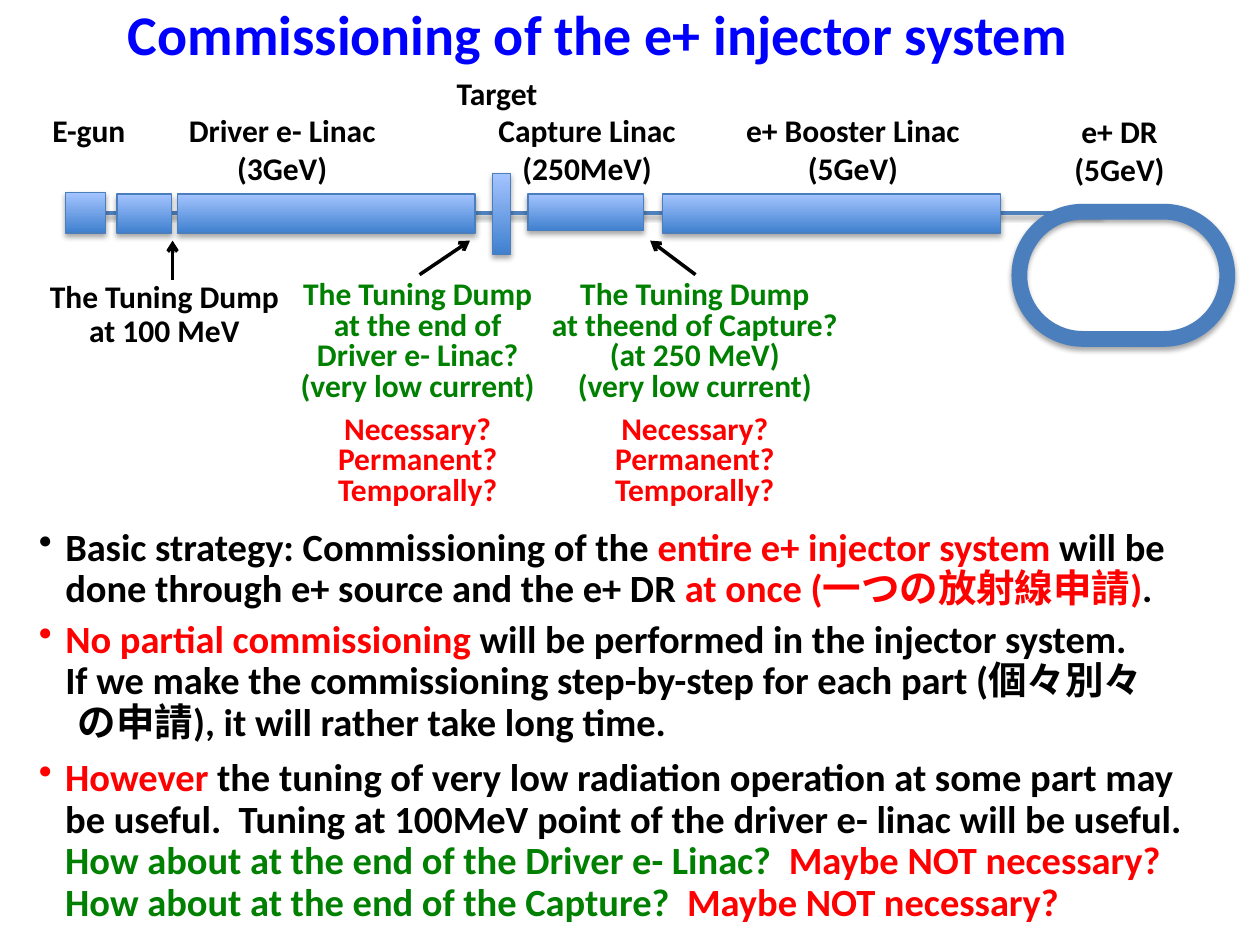
from lxml import etree
from pptx import Presentation
from pptx import util as u
from pptx.dml.color import RGBColor
from pptx.enum import shapes, text
from pptx.oxml.ns import qn

FONT = "Calibri"
BLACK = RGBColor(0x00, 0x00, 0x00)
BLUE = RGBColor(0x00, 0x00, 0xFF)
GREEN = RGBColor(0x00, 0x80, 0x00)
RED = RGBColor(0xFF, 0x00, 0x00)
BEAM = RGBColor(0x4F, 0x81, 0xBD)
OUTLINE = RGBColor(0x4B, 0x7E, 0xBC)
DARK = RGBColor(0x3F, 0x80, 0xCE)
LIGHT = RGBColor(0xA4, 0xC4, 0xFF)

HANG = 0.21  # bullet indent of the strategy text

# left, top, width, height
GUN = (0.52, 1.53, 0.32, 0.32)
SECTIONS = [
    (0.93, 1.54, 0.43, 0.31),  # first driver section
    (1.41, 1.54, 2.36, 0.31),  # driver linac
    (3.91, 1.38, 0.14, 0.64),  # target
    (4.19, 1.54, 0.92, 0.29),  # capture linac
    (5.26, 1.54, 2.68, 0.31),  # booster linac
]
RING = (8.09, 1.68, 1.65, 1.01)

LABELS = [
    ((0.26, 0.83, 0.89, 0.4), ["E-gun"]),
    ((0.89, 0.83, 2.7, 0.71), ["Driver e- Linac", "(3GeV)"]),
    ((3.38, 0.54, 1.13, 0.4), ["Target"]),
    ((3.77, 0.83, 1.78, 0.71), ["Capture Linac", "(250MeV)"]),
    ((5.42, 0.83, 2.7, 0.71), ["e+ Booster Linac", "(5GeV)"]),
    ((8.19, 0.84, 1.39, 0.71), ["e+ DR", "(5GeV)"]),
]

ARROWS = [
    ((1.37, 2.22), (1.37, 1.91)),
    ((3.33, 2.18), (3.73, 1.91)),
    ((5.52, 2.18), (5.16, 1.91)),
]

PROPOSALS = [
    ((1.99, 2.18, 2.65, 1.93),
     ["The Tuning Dump", "at the end of", "Driver e- Linac?", "(very low current)"]),
    ((4.23, 2.18, 2.57, 1.93),
     ["The Tuning Dump", "at theend of Capture? (at 250 MeV)", "(very low current)"]),
]
QUESTIONS = ["Necessary?", "Permanent?", "Temporally?"]

# Each line is a list of (words, colour)
STRATEGY = [
    ((0.21, 4.14, 9.79, 0.77), [
        [("Basic strategy: Commissioning of the ", BLACK),
         ("entire e+ injector system ", RED), ("will be", BLACK)],
        [("done through e+ source and the e+ DR ", BLACK),
         ("at once (一つの放射線申請)", RED), (".", BLACK)],
    ]),
    ((0.21, 4.87, 9.32, 1.11), [
        [("No partial commissioning ", RED),
         ("will be performed in the injector system.", BLACK)],
        [("If we make the commissioning step-by-step for each part (個々別々", BLACK)],
        [("の申請), it will rather take long time.", BLACK)],
    ]),
    ((0.21, 5.97, 9.64, 1.43), [
        [("However ", RED),
         ("the tuning of very low radiation operation at some part may", BLACK)],
        [("be useful.  Tuning at 100MeV point of the driver e- linac will be useful.", BLACK)],
        [("How about at the end of the Driver e- Linac?  ", GREEN),
         ("Maybe NOT necessary?", RED)],
        [("How about at the end of the Capture?  ", GREEN),
         ("Maybe NOT necessary?", RED)],
    ]),
]


def inches(values):
    return [u.Inches(value) for value in values]


def add_run(paragraph, words, size, colour):
    run = paragraph.add_run()
    run.text = words
    run.font.name = FONT
    run.font.size = u.Pt(size)
    run.font.bold = True
    run.font.color.rgb = colour


def add_text(slide, box, lines, size=18, spacing=None, align=text.PP_ALIGN.CENTER):
    """Add a text box with one paragraph per line; return its paragraphs."""
    frame = slide.shapes.add_textbox(*inches(box)).text_frame
    frame.word_wrap = True
    for index, runs in enumerate(lines):
        paragraph = frame.add_paragraph() if index else frame.paragraphs[0]
        paragraph.alignment = align
        paragraph.line_spacing = spacing
        for words, colour in runs:
            add_run(paragraph, words, size, colour)
    return frame.paragraphs


def set_indent(paragraph, margin, bullet=False):
    properties = paragraph._p.get_or_add_pPr()
    properties.set("marL", str(u.Inches(margin)))
    properties.set("indent", str(u.Inches(-HANG if bullet else 0)))
    if bullet:
        etree.SubElement(properties, qn("a:buChar")).set("char", "•")


def add_shadow(shape, distance, opacity):
    """Give the shape a soft shadow straight below it."""
    effects = etree.SubElement(shape._element.spPr, qn("a:effectLst"))
    shadow = etree.SubElement(effects, qn("a:outerShdw"), blurRad=str(u.Pt(3.15)),
                              dist=str(u.Pt(distance)), dir="5400000", rotWithShape="0")
    colour = etree.SubElement(shadow, qn("a:srgbClr"), val="000000")
    etree.SubElement(colour, qn("a:alpha"), val=str(opacity * 1000))


def add_line(slide, start, end, colour):
    line = slide.shapes.add_connector(shapes.MSO_CONNECTOR.STRAIGHT, *inches(start + end))
    line.line.color.rgb = colour
    line.line.width = u.Pt(2)
    return line


def add_arrow(slide, start, end):
    arrow = add_line(slide, start, end, BLACK)
    etree.SubElement(arrow.line._get_or_add_ln(), qn("a:tailEnd"), type="arrow")
    etree.SubElement(arrow._element.spPr, qn("a:effectLst"))


def add_section(slide, box):
    """Add one accelerator section, shaded from light to dark."""
    section = slide.shapes.add_shape(shapes.MSO_SHAPE.RECTANGLE, *inches(box))
    section.fill.gradient()
    section.fill.gradient_angle = 90
    for stop, colour in zip(section.fill.gradient_stops, (DARK, LIGHT)):
        stop.color.rgb = colour
    section.line.color.rgb = OUTLINE
    section.line.width = u.Pt(0.75)
    add_shadow(section, 1.8, 35)
    return section


def add_ring(slide):
    ring = slide.shapes.add_shape(shapes.MSO_SHAPE.ROUNDED_RECTANGLE, *inches(RING))
    ring.adjustments[0] = 0.5
    ring.fill.background()
    ring.line.color.rgb = OUTLINE
    ring.line.width = u.Pt(9)
    add_shadow(ring, 1.8, 35)


def add_title(slide, words):
    title = slide.shapes.title
    title.left, title.top, title.width, title.height = inches((0.73, 0.05, 8.03, 0.55))
    title.text_frame.vertical_anchor = text.MSO_ANCHOR.TOP
    paragraph = title.text_frame.paragraphs[0]
    paragraph.alignment = text.PP_ALIGN.CENTER
    paragraph.line_spacing = 0.8
    add_run(paragraph, words, 32, BLUE)


def add_strategy(slide, box, lines):
    paragraphs = add_text(slide, box, lines, 22, 0.9, text.PP_ALIGN.LEFT)
    for index, paragraph in enumerate(paragraphs):
        set_indent(paragraph, HANG, bullet=index == 0)
    return paragraphs


def main():
    presentation = Presentation()
    presentation.slide_width, presentation.slide_height = inches((10, 7.5))
    slide = presentation.slides.add_slide(presentation.slide_layouts[5])
    add_title(slide, "Commissioning of the e+ injector system")

    # Beam line with its sections and the damping ring
    beam = add_line(slide, (0.84, 1.69), (8.73, 1.69), BEAM)
    add_shadow(beam, 1.6, 38)
    beam.begin_connect(add_section(slide, GUN), 3)
    for box in SECTIONS:
        add_section(slide, box)
    add_ring(slide)
    for box, lines in LABELS:
        add_text(slide, box, [[(line, BLACK)] for line in lines])

    # Tuning dumps
    for start, end in ARROWS:
        add_arrow(slide, start, end)
    add_text(slide, (0.21, 2.18, 2.19, 0.65),
             [[("The Tuning Dump", BLACK)], [("at 100 MeV", BLACK)]], spacing=0.9)
    for box, lines in PROPOSALS:
        coloured = [[(line, GREEN)] for line in lines] + [[(line, RED)] for line in QUESTIONS]
        paragraphs = add_text(slide, box, coloured, spacing=u.Pt(17.6))
        paragraphs[len(lines)].space_before = u.Pt(6.6)

    # Commissioning strategy
    blocks = [add_strategy(slide, box, lines) for box, lines in STRATEGY]
    set_indent(blocks[1][-1], 0.31)

    presentation.save("out.pptx")


if __name__ == "__main__":
    main()
